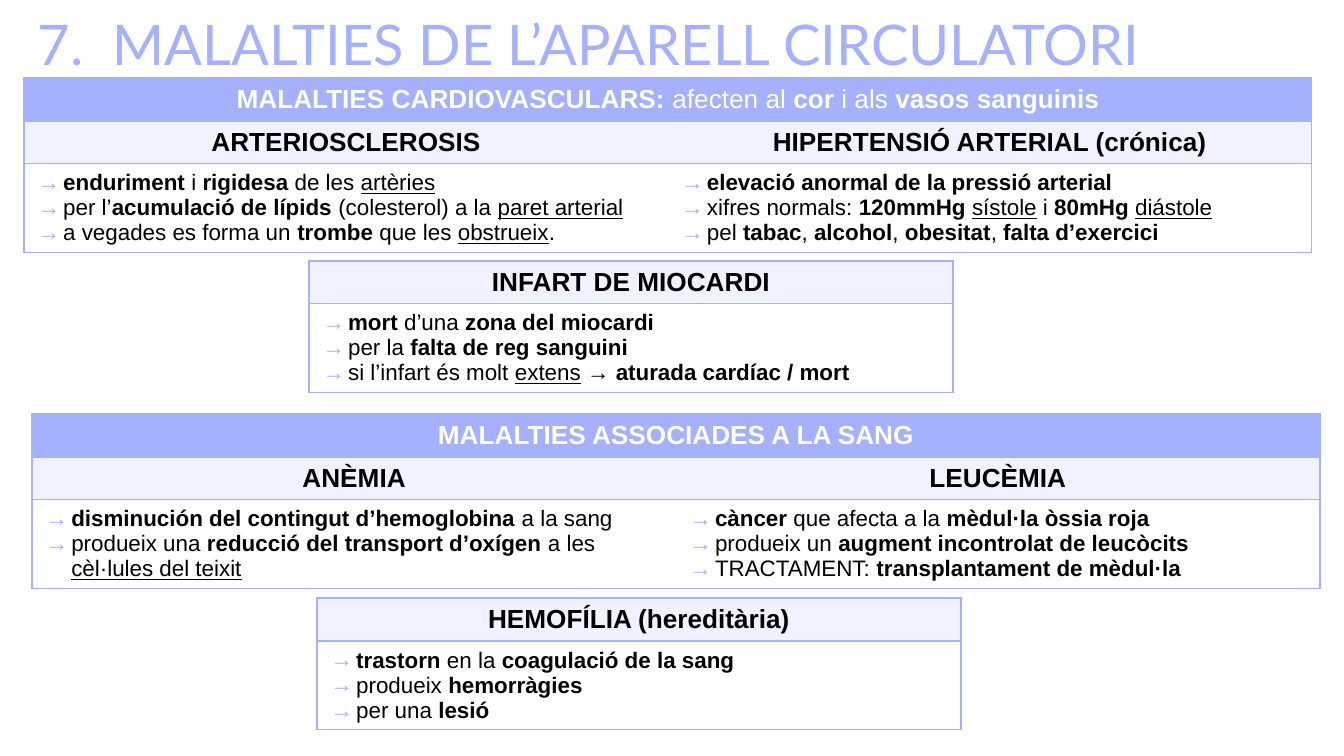
import pptx
import pptx.util
import pptx.dml.color
import pptx.enum.text
import pptx.oxml
import pptx.oxml.ns
from lxml import etree

Inches, Pt = pptx.util.Inches, pptx.util.Pt
RGB = pptx.dml.color.RGBColor
ALIGN = pptx.enum.text.PP_ALIGN
qn = pptx.oxml.ns.qn

LILAC = RGB(0xA5, 0xB0, 0xFE)
PALE = RGB(0xF0, 0xF2, 0xFF)
WHITE = RGB(0xFF, 0xFF, 0xFF)
BLACK = RGB(0, 0, 0)

HEAD, BODY = 0.31, 0.66  # least row heights; rows grow to fit their text
COL = 4.79               # column width


def write(par, text, size=12, font="Arial", color=BLACK, bold=False, align=ALIGN.LEFT):
    """Fill a paragraph; *...* toggles bold and _..._ toggles underline."""
    par.alignment = align
    under = False
    for i, part in enumerate(text.split("*")):
        if i:
            bold = not bold
        for j, piece in enumerate(part.split("_")):
            if j:
                under = not under
            if not piece:
                continue
            run = par.add_run()
            run.text = piece
            run.font.size = Pt(size)
            run.font.name = font
            run.font.color.rgb = color
            run.font.bold = bold
            run.font.underline = under


def bullet(par, indent, tag, font="Arial", **attrs):
    """Give a paragraph a hanging lilac bullet or number."""
    props = par._p.get_or_add_pPr()
    props.set("marL", str(Inches(indent)))
    props.set("indent", str(-Inches(indent)))
    tint = etree.SubElement(props, qn("a:buClr"))
    etree.SubElement(tint, qn("a:srgbClr"), val=str(LILAC))
    etree.SubElement(props, qn("a:buFont"), typeface=font)
    etree.SubElement(props, qn(tag), **attrs)


def border(cell, sides):
    """Draw the named sides (L, R, T, B) in lilac and leave the others bare."""
    props = cell._tc.get_or_add_tcPr()
    for i, side in enumerate("LRTB"):
        line = etree.Element(qn("a:ln" + side), w=str(Pt(1)))
        if side in sides:
            fill = etree.SubElement(line, qn("a:solidFill"))
            etree.SubElement(fill, qn("a:srgbClr"), val=str(LILAC))
        else:
            etree.SubElement(line, qn("a:noFill"))
        props.insert(i, line)


def paint(cell, color, sides):
    cell.fill.solid()
    cell.fill.fore_color.rgb = color
    border(cell, sides)


def add_title(slide, box, text):
    title = slide.shapes.title
    title.left, title.top, title.width, title.height = map(Inches, box)
    frame = title.text_frame
    frame.auto_size = pptx.enum.text.MSO_AUTO_SIZE.NONE
    frame.vertical_anchor = pptx.enum.text.MSO_ANCHOR.BOTTOM
    frame.margin_left = frame.margin_right = Inches(0.1)
    frame.margin_top = frame.margin_bottom = Inches(0.1)
    par = frame.paragraphs[0]
    write(par, text, size=30, font="Lato", color=LILAC)
    bullet(par, 0.56, "a:buAutoNum", font="Lato", type="arabicPeriod", startAt="7")


def add_block(slide, left, top, topics, banner=None):
    """Table with one column per topic (name, points) and an optional banner."""
    count = len(topics)
    heads = [HEAD, HEAD, BODY] if banner else [HEAD, BODY]
    table = slide.shapes.add_table(
        len(heads), count, Inches(left), Inches(top),
        Inches(COL * count), Inches(sum(heads))).table
    table.first_row = table.horz_banding = False
    for row, high in zip(table.rows, heads):
        row.height = Inches(high)

    # Banner across all columns
    if banner:
        for cell in table.rows[0].cells:
            paint(cell, LILAC, "LRTB")
        first = table.cell(0, 0)
        first.merge(table.cell(0, count - 1))
        write(first.text_frame.paragraphs[0], banner, size=14, color=WHITE,
              align=ALIGN.CENTER)

    # Topic names over their points
    base = len(heads) - 2
    for col, (name, points) in enumerate(topics):
        sides = "TB" + "L" * (col == 0) + "R" * (col == count - 1)
        cell = table.cell(base, col)
        paint(cell, PALE, sides)
        write(cell.text_frame.paragraphs[0], name, size=14, bold=True,
              align=ALIGN.CENTER)
        cell = table.cell(base + 1, col)
        paint(cell, WHITE, sides)
        frame = cell.text_frame
        for i, point in enumerate(points):
            par = frame.add_paragraph() if i else frame.paragraphs[0]
            write(par, point)
            bullet(par, 0.19, "a:buChar", char="→")


HEART = [
    ("ARTERIOSCLEROSIS", [
        "*enduriment* i *rigidesa* de les _artèries_",
        "per l’*acumulació de lípids* (colesterol) a la _paret arterial_",
        "a vegades es forma un *trombe* que les _obstrueix_."]),
    ("HIPERTENSIÓ ARTERIAL (crónica)", [
        "*elevació anormal de la pressió arterial*",
        "xifres normals: *120mmHg *_sístole_ i *80mHg *_diástole_",
        "pel *tabac*, *alcohol*, *obesitat*, *falta d’exercici*"]),
]
INFARCT = [
    ("INFART DE MIOCARDI", [
        "*mort* d’una *zona del miocardi*",
        "per la *falta de reg sanguini*",
        "si l’infart és molt _extens_ → *aturada cardíac / mort*"]),
]
BLOOD = [
    ("ANÈMIA", [
        "*disminución del contingut d’hemoglobina* a la sang",
        "produeix una *reducció del transport d’oxígen* a les _cèl·lules del teixit_"]),
    ("LEUCÈMIA", [
        "*càncer* que afecta a la *mèdul·la òssia roja*",
        "produeix un *augment incontrolat de leucòcits*",
        "TRACTAMENT: *transplantament de mèdul·la*"]),
]
HEMO = [
    ("HEMOFÍLIA (hereditària)", [
        "*trastorn* en la *coagulació de la sang*",
        "produeix *hemorràgies*",
        "per una *lesió*"]),
]


def main():
    deck = pptx.Presentation()
    # Widescreen, 16:9
    deck.slide_width = Inches(10)
    deck.slide_height = Inches(10) * 9 // 16
    slide = deck.slides.add_slide(deck.slide_layouts[5])
    add_title(slide, (0.18, -0.1, 9.26, 0.77), "MALALTIES DE L’APARELL CIRCULATORI")
    # Heart and vessels
    add_block(slide, 0.18, 0.58, HEART,
              "*MALALTIES CARDIOVASCULARS:* afecten al *cor* i als *vasos sanguinis*")
    add_block(slide, 2.3, 1.94, INFARCT)
    # Blood
    add_block(slide, 0.24, 3.08, BLOOD, "*MALALTIES ASSOCIADES A LA SANG*")
    add_block(slide, 2.36, 4.45, HEMO)
    deck.save("out.pptx")


if __name__ == "__main__":
    main()
